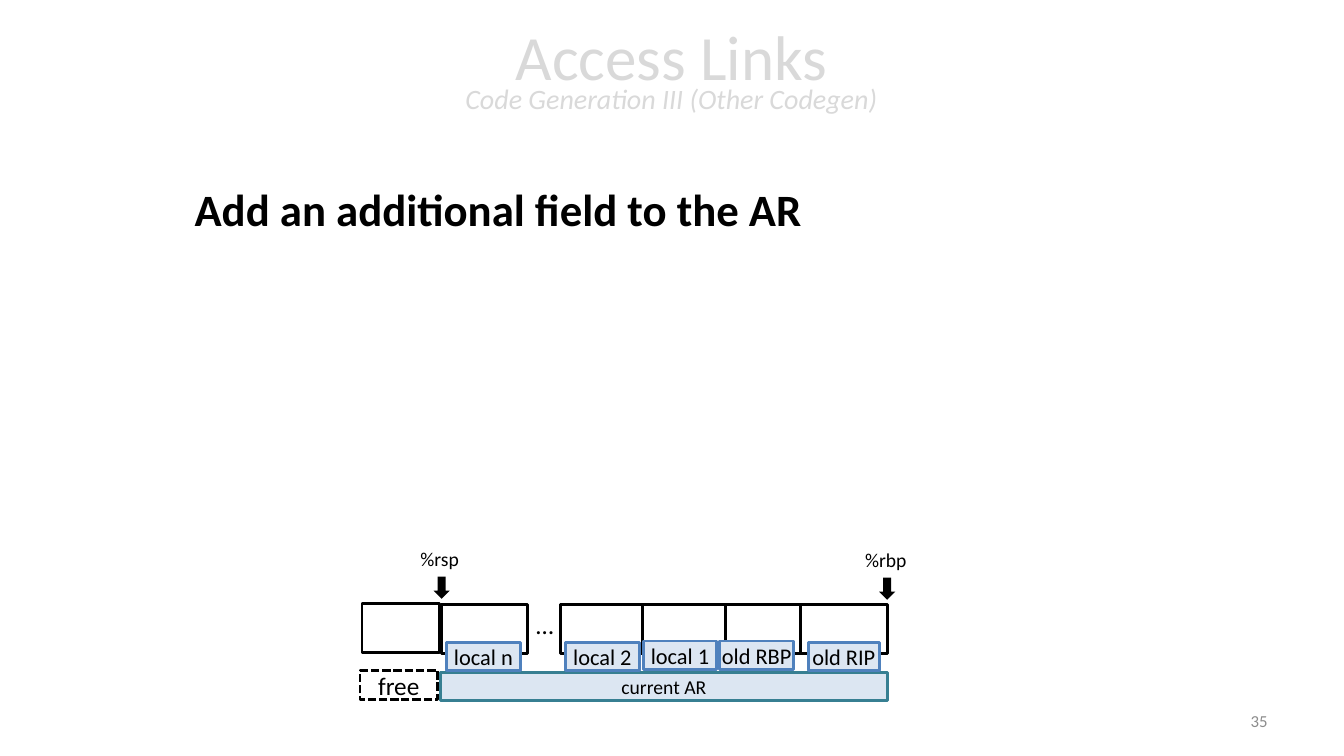
from dataclasses import dataclass

from lxml.etree import SubElement
from pptx import Presentation
from pptx.dml.color import RGBColor
from pptx.enum.dml import MSO_LINE
from pptx.enum.shapes import MSO_SHAPE as Preset
from pptx.enum.text import MSO_ANCHOR as Anchor, MSO_AUTO_SIZE as AutoSize, PP_ALIGN as Align
from pptx.oxml.ns import qn
from pptx.shapes.autoshape import Shape
from pptx.slide import Slide
from pptx.text.text import TextFrame, _Paragraph as Paragraph
from pptx.util import Inches, Pt

COLORS = {
    "heading": "D9D9D9",
    "ink": "000000",
    "paper": "FFFFFF",
    "page": "8C8C8C",
    "field": "DCE6F2",
    "field_edge": "4F81BD",
    "record_edge": "377F92",
}
FONT = "Calibri"


@dataclass(frozen=True)
class Box:
    left: float
    top: float
    width: float
    height: float
    fill: str | None = "paper"
    edge: str | None = "ink"
    text: str = ""
    size: float = 16
    inset: float = 0
    dashed: bool = False
    preset: Preset = Preset.RECTANGLE


@dataclass(frozen=True)
class Caption:
    left: float
    top: float
    width: float
    height: float
    text: str
    size: float
    inset: float = 0


@dataclass(frozen=True)
class Register:
    name: str
    text_left: float
    text_width: float
    arrow_left: float
    top: float


CELLS = [
    Box(left, 6, width, 0.48)
    for left, width in ((4.38, 0.85), (5.56, 0.81), (6.37, 0.88), (7.2, 0.74), (7.94, 0.86))
]
CURRENT_RECORD = Box(4.37, 6.67, 4.43, 0.28, "field", "record_edge", "current AR", 14)
FREE_CELL = Box(3.59, 5.99, 0.77, 0.48)
FREE_LABEL = Box(3.57, 6.65, 0.77, 0.29, None, "ink", "free", 18, 0.02, True)
FIELD_LABELS = [
    Box(left, top, width, 0.28, "field", "field_edge", name)
    for name, left, top, width in (
        ("old RIP", 8.02, 6.37, 0.7),
        ("old RBP", 7.14, 6.36, 0.73),
        ("local 1", 6.38, 6.36, 0.73),
        ("local 2", 5.61, 6.37, 0.73),
        ("local n", 4.43, 6.37, 0.73),
    )
]
REGISTERS = [
    Register("%rbp", 8.58, 0.42, 8.72, 5.44),
    Register("%rsp", 4.17, 0.4, 4.3, 5.43),
]
ELLIPSIS = Caption(5.22, 6, 0.38, 0.4, "…", 18, 0.1)


def rgb(name: str) -> RGBColor:
    return RGBColor.from_string(COLORS[name])


def add_run(paragraph: Paragraph, text: str, size: float, color: str = "ink",
            bold: bool = False, italic: bool = False) -> None:
    run = paragraph.add_run()
    run.text = text
    run.font.name = FONT
    run.font.size = Pt(size)
    run.font.bold = bold
    run.font.italic = italic
    run.font.color.rgb = rgb(color)


def place(shape: Shape, left: float, top: float, width: float, height: float) -> None:
    shape.left, shape.top = Inches(left), Inches(top)
    shape.width, shape.height = Inches(width), Inches(height)


def set_insets(frame: TextFrame, side: float, vertical: float = 0) -> None:
    frame.margin_left = frame.margin_right = Inches(side)
    frame.margin_top = frame.margin_bottom = Inches(vertical)


def draw_box(slide: Slide, box: Box) -> None:
    shape = slide.shapes.add_shape(box.preset, Inches(box.left), Inches(box.top),
                                   Inches(box.width), Inches(box.height))
    shape.shadow.inherit = False
    if box.fill:
        shape.fill.solid()
        shape.fill.fore_color.rgb = rgb(box.fill)
    else:
        shape.fill.background()
    if box.edge:
        shape.line.color.rgb = rgb(box.edge)
        shape.line.width = Pt(2)
        if box.dashed:
            shape.line.dash_style = MSO_LINE.SQUARE_DOT
    else:
        shape.line.fill.background()
    if box.text:
        frame = shape.text_frame
        set_insets(frame, box.inset)
        frame.vertical_anchor = Anchor.MIDDLE
        frame.paragraphs[0].alignment = Align.CENTER
        add_run(frame.paragraphs[0], box.text, box.size)


def draw_caption(slide: Slide, caption: Caption) -> None:
    frame = slide.shapes.add_textbox(Inches(caption.left), Inches(caption.top),
                                     Inches(caption.width), Inches(caption.height)).text_frame
    set_insets(frame, caption.inset, caption.inset / 2)
    frame.word_wrap = False
    frame.auto_size = AutoSize.SHAPE_TO_FIT_TEXT
    add_run(frame.paragraphs[0], caption.text, caption.size)


def draw_register(slide: Slide, register: Register) -> None:
    draw_box(slide, Box(register.arrow_left, register.top + 0.29, 0.16, 0.22,
                        "ink", None, preset=Preset.DOWN_ARROW))
    draw_caption(slide, Caption(register.text_left, register.top, register.text_width,
                                0.24, register.name, 14))


def write_title(slide: Slide) -> None:
    title = slide.shapes.title
    place(title, 2.35, 0.03, 8.62, 1.45)
    frame = title.text_frame
    frame.auto_size = AutoSize.NONE
    frame.vertical_anchor = Anchor.MIDDLE
    heading = frame.paragraphs[0]
    heading.alignment = Align.CENTER
    heading.line_spacing = 0.7
    add_run(heading, "Access Links", 45, "heading")
    heading.add_line_break()
    add_run(heading, "Code Generation III (Other Codegen)", 20, "heading", italic=True)


def write_body(slide: Slide) -> None:
    body = slide.placeholders[1]
    place(body, 1.83, 1.75, 8.94, 2.5)
    body.text_frame.auto_size = AutoSize.NONE
    point = body.text_frame.paragraphs[0]
    properties = point._p.get_or_add_pPr()
    properties.set("marL", "0")
    properties.set("indent", "0")
    SubElement(properties, qn("a:buNone"))
    add_run(point, "Add an additional field to the AR", 32, bold=True)


def write_page_number(slide: Slide) -> None:
    frame = slide.shapes.add_textbox(Inches(9.56), Inches(6.95), Inches(3.11), Inches(0.4)).text_frame
    frame.word_wrap = True
    frame.vertical_anchor = Anchor.MIDDLE
    frame.paragraphs[0].alignment = Align.RIGHT
    add_run(frame.paragraphs[0], "35", 12, "page")


def main() -> None:
    deck = Presentation()
    deck.slide_width, deck.slide_height = Inches(13.33), Inches(7.5)
    slide = deck.slides.add_slide(deck.slide_layouts[1])
    write_title(slide)
    write_body(slide)
    write_page_number(slide)
    for box in (*CELLS, CURRENT_RECORD, FREE_LABEL, FREE_CELL, *FIELD_LABELS):
        draw_box(slide, box)
    for register in REGISTERS:
        draw_register(slide, register)
    draw_caption(slide, ELLIPSIS)
    deck.save("out.pptx")


if __name__ == "__main__":
    main()
